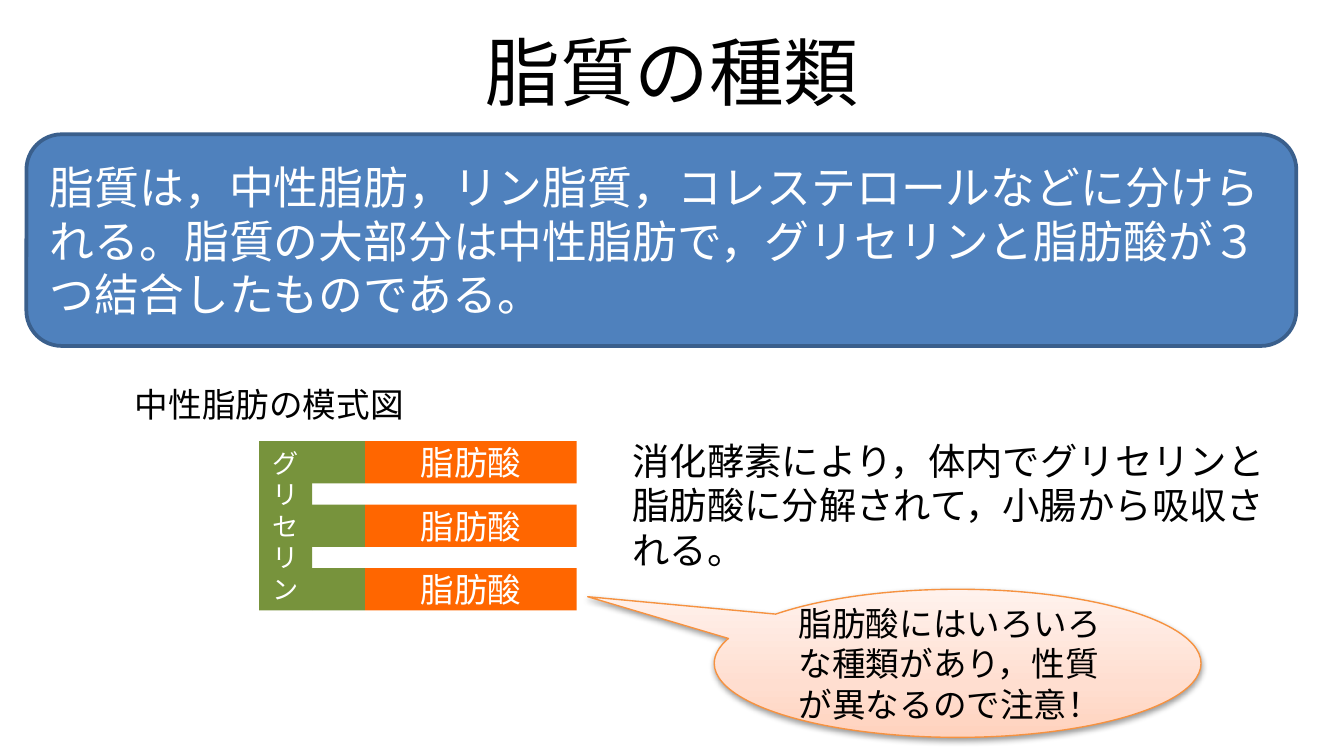
from lxml import etree
from pptx import Presentation
from pptx.dml.color import RGBColor
from pptx.enum.shapes import MSO_SHAPE as Shape
from pptx.enum.text import MSO_ANCHOR as Anchor, MSO_AUTO_SIZE as AutoSize, PP_ALIGN as Align
from pptx.oxml import parse_xml
from pptx.oxml.ns import nsdecls, qn
from pptx.util import Cm, Pt

FONT = "Calibri"
BLACK, WHITE = "000000", "FFFFFF"
GREEN, ORANGE = "77933C", "FF6600"


def colour(value):
    return RGBColor.from_string(value)


def lengths(box):
    return [Cm(value) for value in box]


def write(shape, text, size, ink, align=Align.LEFT):
    para = shape.text_frame.paragraphs[0]
    para.text = text
    para.alignment = align
    para.font.name = FONT
    para.font.size = Pt(size)
    para.font.color.rgb = colour(ink)
    return para


def add_block(shapes, kind, box, fill, line=None, width=0):
    block = shapes.add_shape(kind, *lengths(box))
    block.shadow.inherit = False
    block.fill.solid()
    block.fill.fore_color.rgb = colour(fill)
    if line:
        block.line.color.rgb = colour(line)
        block.line.width = Pt(width)
    else:
        block.line.fill.background()
    return block


def add_label(page, box, text, size, wrap=True):
    label = page.shapes.add_textbox(*lengths(box))
    label.text_frame.word_wrap = wrap
    label.text_frame.auto_size = AutoSize.SHAPE_TO_FIT_TEXT
    write(label, text, size, BLACK)


def add_title(page, box, text):
    title = page.shapes.add_textbox(*lengths(box))
    title.text_frame.word_wrap = True
    title.text_frame.vertical_anchor = Anchor.MIDDLE
    write(title, text, 40, BLACK, Align.CENTER)


def add_summary(page, box, text):
    summary = add_block(page.shapes, Shape.ROUNDED_RECTANGLE, box, "4F81BD", "3A5F8C", 2)
    para = write(summary, text, 24, WHITE)
    para.space_before = para.space_after = Pt(12)


def add_fat_diagram(page, box):
    left, top, width, height = box
    unit = width / 6
    bar = height / 4
    step = (height - bar) / 2
    parts = page.shapes.add_group_shape().shapes
    spine = add_block(parts, Shape.RECTANGLE, (left, top, unit, height), GREEN)
    write(spine, "グリセリン", 14, WHITE, Align.CENTER)
    for row in range(3):
        bar_top = top + row * step
        add_block(parts, Shape.RECTANGLE, (left + unit, bar_top, unit, bar), GREEN)
        acid_box = (left + 2 * unit, bar_top, 4 * unit, bar)
        acid = add_block(parts, Shape.RECTANGLE, acid_box, ORANGE)
        write(acid, "脂肪酸", 18, WHITE, Align.CENTER)


def add_callout(page, box, text):
    callout = add_block(page.shapes, Shape.OVAL_CALLOUT, box, WHITE, "F69240", 0.75)
    callout.adjustments[0] = -0.76
    callout.adjustments[1] = -0.45
    write(callout, text, 18, BLACK)

    properties = callout.element.spPr
    gradient = parse_xml(f'<a:gradFill {nsdecls("a")} rotWithShape="1"><a:gsLst/>'
                         '<a:lin ang="16200000" scaled="1"/></a:gradFill>')
    for position, shade in ((0, "FFD2BD"), (35, "FFDED0"), (100, "FFF2ED")):
        stop = etree.SubElement(gradient[0], qn("a:gs"), pos=str(position * 1000))
        etree.SubElement(stop, qn("a:srgbClr"), val=shade)
    properties.replace(properties.find(qn("a:solidFill")), gradient)

    effects = properties.find(qn("a:effectLst"))
    shadow = etree.SubElement(effects, qn("a:outerShdw"), blurRad=str(Pt(3.1)),
                              dist=str(Pt(1.6)), dir="5400000", rotWithShape="0")
    tint = etree.SubElement(shadow, qn("a:srgbClr"), val=BLACK)
    etree.SubElement(tint, qn("a:alpha"), val="38000")


def main():
    deck = Presentation()
    deck.slide_width, deck.slide_height = Cm(25.4), Cm(14.29)
    page = deck.slides.add_slide(deck.slide_layouts[6])
    add_title(page, (1.27, 0.15, 22.86, 2.39), "脂質の種類")
    add_summary(page, (0.5, 2.54, 24, 4),
                "脂質は，中性脂肪，リン脂質，コレステロールなどに分けられる。"
                "脂質の大部分は中性脂肪で，グリセリンと脂肪酸が３つ結合したものである。")
    add_fat_diagram(page, (4.9, 8.34, 6, 3.2))
    add_label(page, (2.3, 7.14, 5.64, 1.02), "中性脂肪の模式図", 18, wrap=False)
    add_callout(page, (13.5, 11.14, 9.2, 2.8),
                "脂肪酸にはいろいろな種類があり，性質が異なるので注意！")
    add_label(page, (11.7, 8.15, 12.7, 1.96),
              "消化酵素により，体内でグリセリンと脂肪酸に分解されて，小腸から吸収される。", 20)
    deck.save("out.pptx")


if __name__ == "__main__":
    main()
